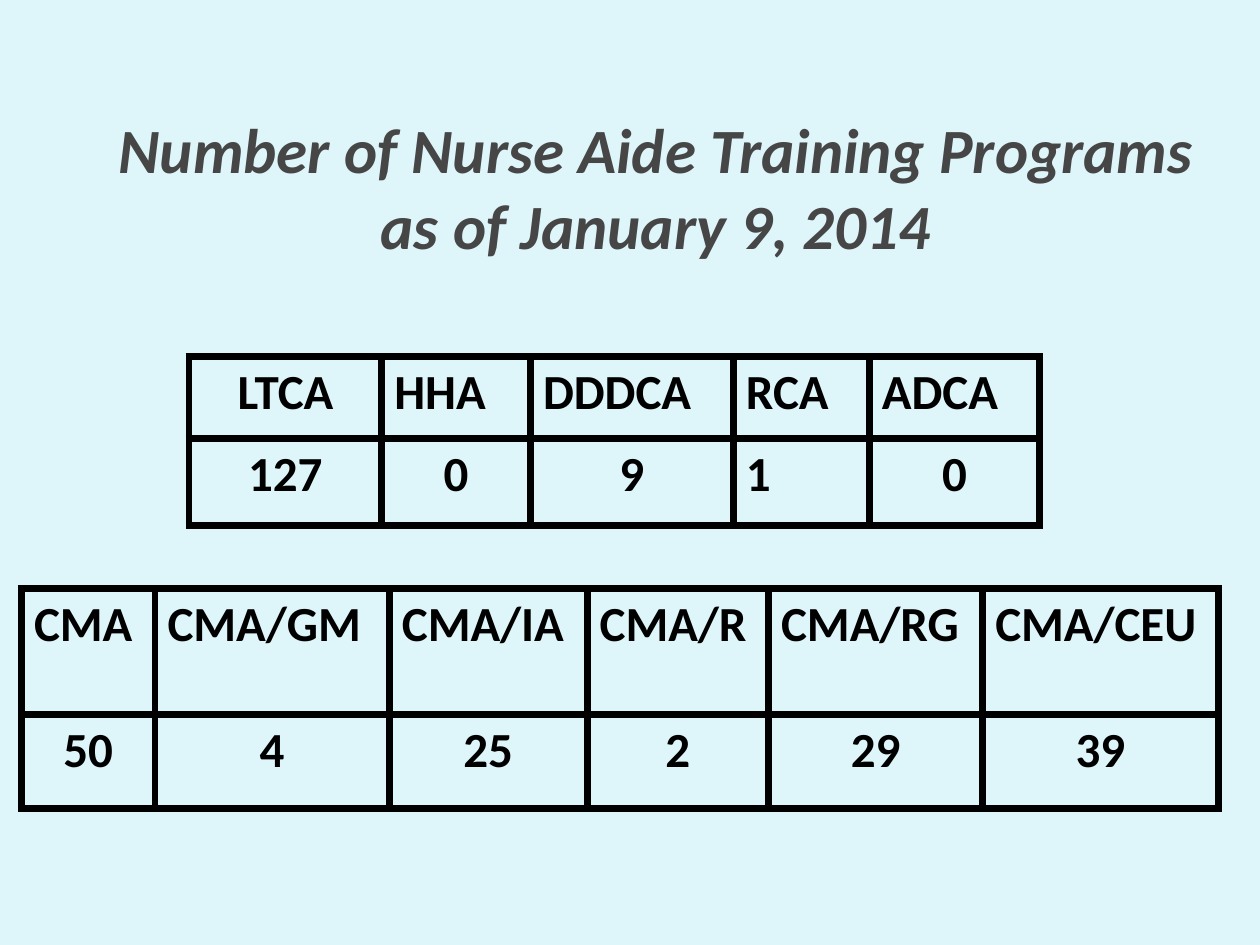
from dataclasses import dataclass

from lxml import etree
from pptx import Presentation
from pptx.dml.color import RGBColor
from pptx.enum.text import MSO_ANCHOR, MSO_AUTO_SIZE, PP_ALIGN
from pptx.oxml.ns import qn
from pptx.util import Inches, Pt

LEFT = PP_ALIGN.LEFT
CENTER = PP_ALIGN.CENTER
BOTTOM = MSO_ANCHOR.BOTTOM
NO_AUTOFIT = MSO_AUTO_SIZE.NONE
TITLE_ONLY = 5
FONT = "Calibri"
BACKGROUND = "DEF5FA"
TITLE_COLOR = "464646"
BLACK = "000000"
BORDER_WIDTH = Pt(4.5)


@dataclass
class Column:
    label: str
    value: str
    width: float
    label_alignment: PP_ALIGN = LEFT
    value_alignment: PP_ALIGN = CENTER


@dataclass
class CountTable:
    left: float
    top: float
    row_heights: tuple[float, float]
    columns: list[Column]


TABLES = [
    CountTable(1.5, 2.83, (0.65, 0.69), [
        Column("LTCA", "127", 1.53, label_alignment=CENTER),
        Column("HHA", "0", 1.18),
        Column("DDDCA", "9", 1.61),
        Column("RCA", "1", 1.08, value_alignment=LEFT),
        Column("ADCA", "0", 1.35),
    ]),
    CountTable(0.17, 4.67, (1, 0.75), [
        Column("CMA", "50", 1.06),
        Column("CMA/GM", "4", 1.86),
        Column("CMA/IA", "25", 1.57),
        Column("CMA/R", "2", 1.44),
        Column("CMA/RG", "29", 1.7),
        Column("CMA/CEU", "39", 1.87),
    ]),
]


def color(value: str) -> RGBColor:
    return RGBColor.from_string(value)


def add_run(paragraph, text: str, size: float, text_color: str, italic: bool = False) -> None:
    run = paragraph.add_run()
    run.text = text
    run.font.name = FONT
    run.font.size = Pt(size)
    run.font.bold = True
    run.font.italic = italic
    run.font.color.rgb = color(text_color)


def set_borders(cell) -> None:
    properties = cell._tc.get_or_add_tcPr()
    for side in ("a:lnL", "a:lnR", "a:lnT", "a:lnB"):
        line = etree.SubElement(properties, qn(side), w=str(BORDER_WIDTH))
        fill = etree.SubElement(line, qn("a:solidFill"))
        etree.SubElement(fill, qn("a:srgbClr"), val=BLACK)


def fill_cell(cell, text: str, alignment: PP_ALIGN) -> None:
    set_borders(cell)
    cell.fill.background()
    paragraph = cell.text_frame.paragraphs[0]
    paragraph.alignment = alignment
    paragraph.space_before = Pt(5.6)
    add_run(paragraph, text, 28, BLACK)


def add_title(slide) -> None:
    title = slide.shapes.title
    title.left, title.top = Inches(0.83), Inches(0.5)
    title.width, title.height = Inches(8.75), Inches(1.58)
    frame = title.text_frame
    frame.word_wrap = True
    frame.auto_size = NO_AUTOFIT
    frame.vertical_anchor = BOTTOM
    frame.margin_left = frame.margin_right = frame.margin_bottom = 0
    frame.margin_top = Inches(0.05)
    paragraph = frame.paragraphs[0]
    paragraph.alignment = CENTER
    paragraph.line_spacing = 1.0
    add_run(paragraph, "Number of Nurse Aide Training Programs", 36, TITLE_COLOR, italic=True)
    paragraph.add_line_break()
    add_run(paragraph, "as of January 9, 2014", 36, TITLE_COLOR, italic=True)


def add_count_table(slide, spec: CountTable) -> None:
    width = sum(column.width for column in spec.columns)
    table = slide.shapes.add_table(
        len(spec.row_heights), len(spec.columns), Inches(spec.left), Inches(spec.top),
        Inches(width), Inches(sum(spec.row_heights)),
    ).table
    table.first_row = False
    table.horz_banding = False
    for row, height in zip(table.rows, spec.row_heights):
        row.height = Inches(height)
    for index, column in enumerate(spec.columns):
        table.columns[index].width = Inches(column.width)
        fill_cell(table.cell(0, index), column.label, column.label_alignment)
        fill_cell(table.cell(1, index), column.value, column.value_alignment)


def main() -> None:
    presentation = Presentation()
    presentation.slide_width = Inches(10)
    presentation.slide_height = Inches(7.5)
    slide = presentation.slides.add_slide(presentation.slide_layouts[TITLE_ONLY])
    background = slide.background.fill
    background.solid()
    background.fore_color.rgb = color(BACKGROUND)
    add_title(slide)
    for count_table in TABLES:
        add_count_table(slide, count_table)
    presentation.save("out.pptx")


if __name__ == "__main__":
    main()
